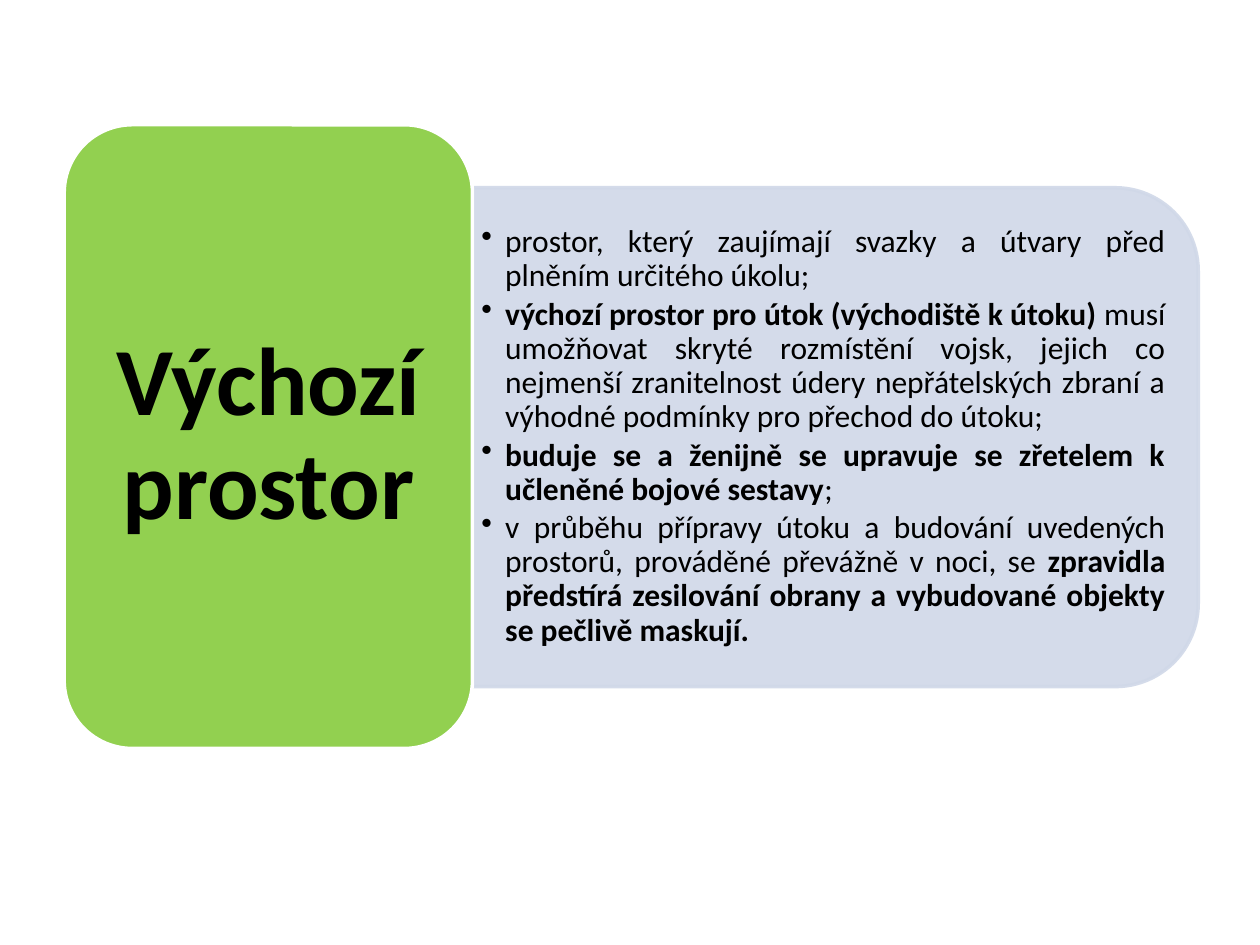
from lxml.etree import SubElement as Sub
from pptx import Presentation as Deck
from pptx.dml.color import RGBColor as Rgb
from pptx.enum.shapes import MSO_SHAPE as Kind
from pptx.enum.text import MSO_ANCHOR as Anchor, PP_ALIGN as Align
from pptx.oxml.ns import qn
from pptx.util import Inches, Pt

WIDE, HIGH = Inches(10), Inches(7.5)
HUES = {"panel": "D0D8E8", "label": "92D050", "edge": "FFFFFF", "ink": "000000"}
TITLE = [[("Výchozí prostor", True)]]
POINTS = [
    [("prostor, který zaujímají svazky a útvary před plněním určitého úkolu;", False)],
    [("výchozí prostor pro útok (východiště k útoku)", True),
     (" musí umožňovat skryté rozmístění vojsk, jejich co nejmenší zranitelnost "
      "údery nepřátelských zbraní a výhodné podmínky pro přechod do útoku;", False)],
    [("buduje se a ženijně se upravuje se zřetelem k učleněné bojové sestavy", True),
     (";", False)],
    [("v průběhu přípravy útoku a budování uvedených prostorů, "
      "prováděné převážně v noci, se ", False),
     ("zpravidla předstírá zesilování obrany a vybudované objekty "
      "se pečlivě maskují.", True)],
]


def assign(item, form):
    """Set each value of a format dict on an item."""
    for name, value in form.items():
        setattr(item, name, value)


def place(left, top, width, height):
    """Turn percent shares of the slide into lengths."""
    return [int(share * side / 100) for share, side
            in zip((left, top, width, height), (WIDE, HIGH, WIDE, HIGH))]


def paint(color, hue, alpha):
    """Colour a solid fill and give it an opacity in percent."""
    color.solid()
    color.fore_color.rgb = Rgb.from_string(HUES[hue])
    if alpha < 100:
        node = color.fore_color._xFill.find(qn("a:srgbClr"))
        Sub(node, qn("a:alpha"), val=str(alpha * 1000))


def block(slide, kind, box, fill, edge, alpha=100, turn=0):
    """Draw a filled and outlined shape."""
    shape = slide.shapes.add_shape(kind, *place(*box))
    shape.shadow.inherit = False
    shape.rotation = turn
    paint(shape.fill, fill, alpha)
    paint(shape.line.fill, edge, alpha)
    shape.line.width = Pt(2)


def bullet(para):
    """Give a paragraph a hanging bullet."""
    props = para._p.get_or_add_pPr()
    assign_xml = {"marL": Inches(0.19), "indent": -Inches(0.19)}
    for name, value in assign_xml.items():
        props.set(name, str(value))
    Sub(props, qn("a:buChar"), char="•")


def write(slide, box, lines, size, inset, gap, align, mark=False):
    """Write centred-in-height paragraphs of plain and bold runs."""
    frame = slide.shapes.add_textbox(*place(*box)).text_frame
    side, rim = map(Inches, inset)
    assign(frame, {"word_wrap": True, "vertical_anchor": Anchor.MIDDLE,
                   "margin_left": side, "margin_right": side,
                   "margin_top": rim, "margin_bottom": rim})
    for row, parts in enumerate(lines):
        para = frame.add_paragraph() if row else frame.paragraphs[0]
        assign(para, {"alignment": align, "line_spacing": 0.9,
                      "space_after": Pt(size * gap)})
        if mark:
            bullet(para)
        for text, bold in parts:
            run = para.add_run()
            run.text = text
            assign(run.font, {"name": "Calibri", "size": Pt(size), "bold": bold})
            run.font.color.rgb = Rgb.from_string(HUES["ink"])


def main():
    """Build the slide and save it."""
    deck = Deck()
    assign(deck, {"slide_width": WIDE, "slide_height": HIGH})
    slide = deck.slides.add_slide(deck.slide_layouts[6])
    block(slide, Kind.ROUND_2_SAME_RECTANGLE, (46.5, 7.87, 39.6, 76.8),
          "panel", "panel", 90, 90)
    write(slide, (37.5, 22.4, 55.7, 47.6), POINTS, 18, (0.07, 0.04), 0.15,
          Align.JUSTIFY, True)
    block(slide, Kind.ROUNDED_RECTANGLE, (5.1, 13.2, 32.4, 66), "label", "edge")
    write(slide, (6.7, 15.33, 29.2, 61.73), TITLE, 55, (0.23, 0.11), 0.35,
          Align.CENTER)
    deck.save("out.pptx")


if __name__ == "__main__":
    main()
